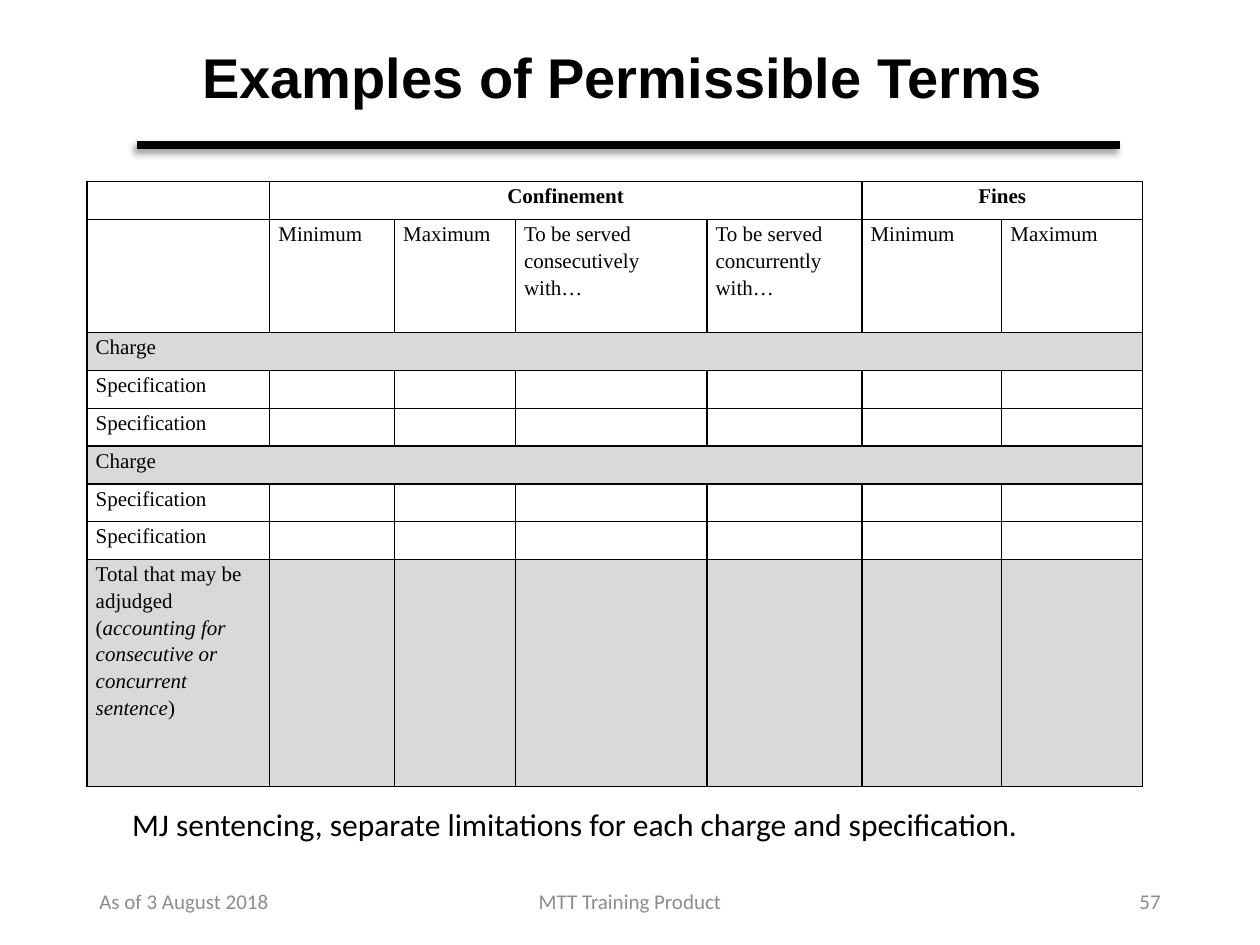
from lxml import etree
from pptx import Presentation
from pptx.dml.color import RGBColor
from pptx.enum.shapes import MSO_CONNECTOR
from pptx.enum.text import MSO_ANCHOR, PP_ALIGN
from pptx.oxml import parse_xml
from pptx.oxml.ns import nsdecls
from pptx.util import Inches, Pt

STRAIGHT = MSO_CONNECTOR.STRAIGHT
TOP, MIDDLE = MSO_ANCHOR.TOP, MSO_ANCHOR.MIDDLE
LEFT, CENTER, RIGHT = PP_ALIGN.LEFT, PP_ALIGN.CENTER, PP_ALIGN.RIGHT

BLACK, GRAY, SHADE = "000000", "8C8C8C", "D9D9D9"
TITLE = {"name": "Arial", "size": Pt(32), "bold": True}
FOOTER = {"name": "Calibri", "size": Pt(12)}
NOTE = {"name": "Calibri", "size": Pt(18)}
CELL = {"name": "Times New Roman", "size": Pt(12), "bold": False}
HEADING = {**CELL, "bold": True}

COLUMN_WIDTHS = [1.45, 0.99, 0.96, 1.52, 1.23, 1.11, 1.12]
ROW_HEIGHTS = [0.3, 0.9] + [0.3] * 6 + [1.8]
SUBHEADINGS = ["Minimum", "Maximum", "To be served consecutively with…",
               "To be served concurrently with…", "Minimum", "Maximum"]
ROW_LABELS = ["Charge", "Specification", "Specification"] * 2
TOTAL_RUNS = [("Total that may be adjudged (", False),
              ("accounting for consecutive or concurrent sentence", True),
              (")", False)]


def color(value):
    """Turn a hex string into a colour."""
    return RGBColor.from_string(value)


def format_font(font, values, hex_color=BLACK):
    """Set font attributes and colour."""
    for name, value in values.items():
        setattr(font, name, value)
    font.color.rgb = color(hex_color)


def add_text(slide, box, text, values, hex_color=BLACK, alignment=LEFT, anchor=MIDDLE, spacing=1.0):
    """Add one paragraph of text in a box."""
    frame = slide.shapes.add_textbox(*map(Inches, box)).text_frame
    frame.word_wrap = True
    frame.vertical_anchor = anchor
    paragraph = frame.paragraphs[0]
    paragraph.alignment = alignment
    paragraph.line_spacing = spacing
    run = paragraph.add_run()
    run.text = text
    format_font(run.font, values, hex_color)


def add_rule(slide, left, top, width):
    """Add the thick shadowed line under the title."""
    rule = slide.shapes.add_connector(
        STRAIGHT, Inches(left), Inches(top), Inches(left + width), Inches(top))
    rule.line.color.rgb = color(BLACK)
    rule.line.width = Pt(4.25)
    rule._element.spPr.append(parse_xml(
        f'<a:effectLst {nsdecls("a")}><a:outerShdw blurRad="{Pt(4)}" dist="{Pt(3)}" '
        f'dir="8100000" rotWithShape="0"><a:srgbClr val="{BLACK}">'
        '<a:alpha val="40000"/></a:srgbClr></a:outerShdw></a:effectLst>'))


def add_borders(cell):
    """Draw a thin black border on each side of a cell."""
    properties = cell._tc.get_or_add_tcPr()
    for position, side in enumerate(("lnL", "lnR", "lnT", "lnB")):
        border = etree.fromstring(
            f'<a:{side} {nsdecls("a")} w="{Pt(1)}"><a:solidFill>'
            f'<a:srgbClr val="{BLACK}"/></a:solidFill></a:{side}>')
        properties.insert(position, border)


def fill_cell(cell, runs, values=CELL, alignment=LEFT):
    """Write runs of (text, italic) into a cell."""
    paragraph = cell.text_frame.paragraphs[0]
    paragraph.alignment = alignment
    for text, italic in runs:
        run = paragraph.add_run()
        run.text = text
        format_font(run.font, {**values, "italic": italic})


def add_terms_table(slide, left, top):
    """Add the table of confinement and fine limits."""
    table = slide.shapes.add_table(
        len(ROW_HEIGHTS), len(COLUMN_WIDTHS), Inches(left), Inches(top),
        Inches(sum(COLUMN_WIDTHS)), Inches(sum(ROW_HEIGHTS))).table
    table.first_row = table.horz_banding = False
    for column, width in zip(table.columns, COLUMN_WIDTHS):
        column.width = Inches(width)
    last_row, last_column = len(ROW_HEIGHTS) - 1, len(COLUMN_WIDTHS) - 1
    charge_rows = [index for index, label in enumerate(ROW_LABELS, 2) if label == "Charge"]
    shaded_rows = charge_rows + [last_row]
    for index, (row, height) in enumerate(zip(table.rows, ROW_HEIGHTS)):
        row.height = Inches(height)
        for cell in row.cells:
            cell.margin_left = cell.margin_right = Inches(0.07)
            cell.margin_top = cell.margin_bottom = 0
            cell.fill.solid()
            cell.fill.fore_color.rgb = color(SHADE if index in shaded_rows else "FFFFFF")
            add_borders(cell)
            paragraph = cell.text_frame.paragraphs[0]
            paragraph.line_spacing = 1.15
            format_font(paragraph.font, CELL)

    for text, first, last in (("Confinement", 1, 4), ("Fines", 5, last_column)):
        table.cell(0, first).merge(table.cell(0, last))
        fill_cell(table.cell(0, first), [(text, False)], HEADING, CENTER)
    for index, text in enumerate(SUBHEADINGS, 1):
        fill_cell(table.cell(1, index), [(text, False)])
    for index in charge_rows:
        table.cell(index, 0).merge(table.cell(index, last_column))
    for index, text in enumerate(ROW_LABELS, 2):
        fill_cell(table.cell(index, 0), [(text, False)])
    fill_cell(table.cell(last_row, 0), TOTAL_RUNS)


def add_footer(slide, top, height):
    """Add the date, product name and page number."""
    for text, left, width, alignment in (
            ("As of 3 August 2018", 0.69, 2.25, LEFT),
            ("MTT Training Product", 3.31, 3.38, CENTER),
            ("57", 7.06, 2.25, RIGHT)):
        add_text(slide, (left, top, width, height), text, FOOTER, GRAY, alignment)


def main():
    """Build and save the slide."""
    presentation = Presentation()
    presentation.slide_width, presentation.slide_height = Inches(10), Inches(7.5)
    slide = presentation.slides.add_slide(presentation.slide_layouts[6])
    add_rule(slide, 1.09, 1.15, 7.8)
    add_footer(slide, 6.95, 0.4)
    add_text(slide, (1.04, 0.23, 7.8, 0.81), "Examples of Permissible Terms",
             TITLE, alignment=CENTER, spacing=0.9)
    add_terms_table(slide, 0.69, 1.44)
    add_text(slide, (0.95, 6.34, 8.1, 0.4),
             "MJ sentencing, separate limitations for each charge and specification.",
             NOTE, anchor=TOP)
    presentation.save("out.pptx")


if __name__ == "__main__":
    main()
